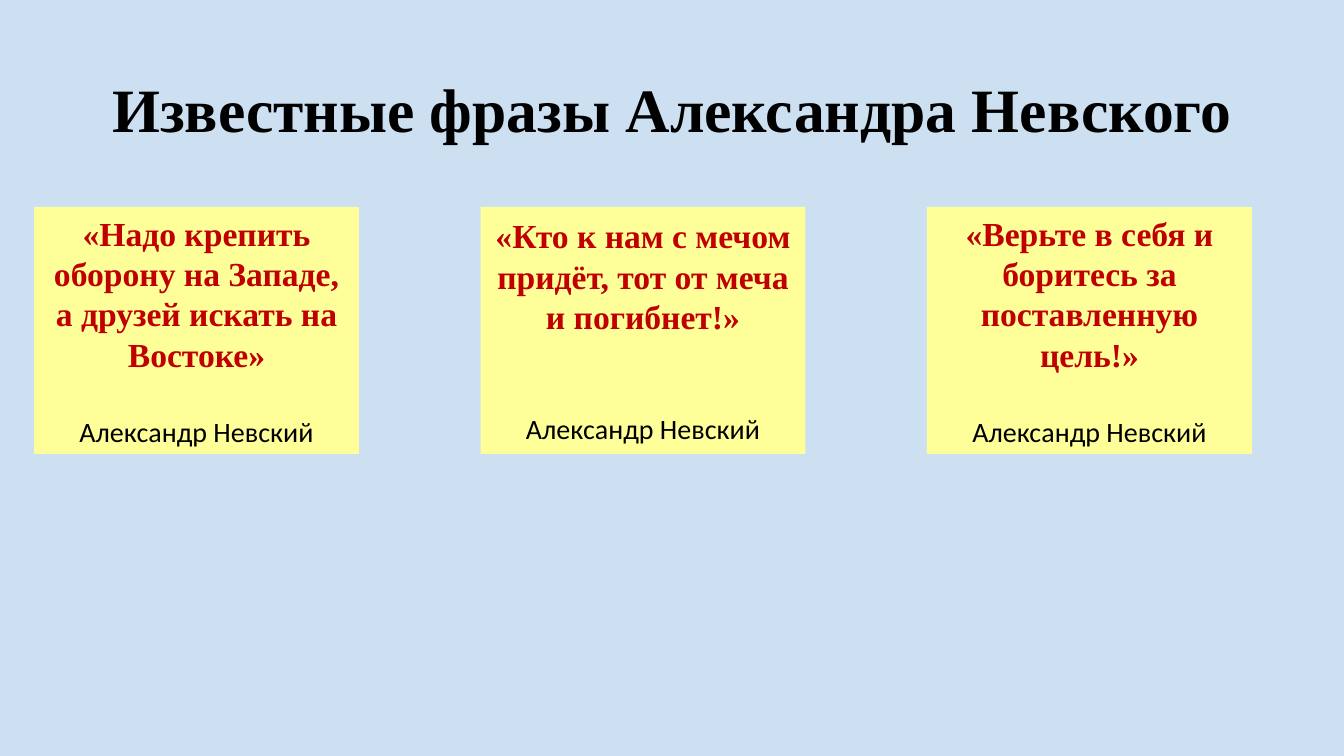
"""Build a slide with three quotations of Alexander Nevsky."""
from dataclasses import dataclass

from pptx import Presentation
from pptx import util as u
from pptx.dml.color import RGBColor
from pptx.enum import shapes, text

TITLE = "Известные фразы Александра Невского"
AUTHOR = "Александр Невский"
QUOTES = [
    ("«Надо крепить оборону на Западе, а друзей искать на Востоке»", 29),
    ("«Кто к нам с мечом придёт, тот от меча и погибнет!»", 54),
    ("«Верьте в себя и боритесь за поставленную цель!»", 29),
]

SLIDE = (1344, 756)
TITLE_BOX = (93, 40, 1159, 146)
CARD_TOP, CARD_W, CARD_H = 207, 325, 247
FIRST_LEFT, LAST_LEFT = 34, 927
EMU_PER_PX = 914400 / 100.8


@dataclass(frozen=True)
class Theme:
    """Colours, fonts and type sizes."""
    back: str = "CCE0F2"
    card: str = "FFFF99"
    quote: str = "C00000"
    ink: str = "000000"
    serif: str = "Times New Roman"
    sans: str = "Calibri"
    title_pt: int = 44
    quote_pt: int = 24
    author_pt: int = 20


THEME = Theme()


def px(n):
    """Turn pixels into EMU."""
    return u.Emu(round(n * EMU_PER_PX))


def paint(fill, colour):
    """Fill with one solid colour."""
    fill.solid()
    fill.fore_color.rgb = RGBColor.from_string(colour)


def write(p, words, font, size, colour, bold):
    """Add one centred run to a paragraph."""
    p.alignment = text.PP_ALIGN.CENTER
    r = p.add_run()
    r.text = words
    r.font.name, r.font.size, r.font.bold = font, u.Pt(size), bold
    r.font.color.rgb = RGBColor.from_string(colour)


def add_title(s):
    """Place and format the title."""
    sp = s.shapes.title
    sp.left, sp.top, sp.width, sp.height = map(px, TITLE_BOX)
    tf = sp.text_frame
    tf.word_wrap = True
    tf.vertical_anchor = text.MSO_ANCHOR.MIDDLE
    p = tf.paragraphs[0]
    p.line_spacing = 0.9
    write(p, TITLE, THEME.serif, THEME.title_pt, THEME.ink, True)


def add_card(s, left, quote, gap):
    """Add a quotation card with its author below a gap."""
    box = map(px, (left, CARD_TOP, CARD_W, CARD_H))
    sp = s.shapes.add_shape(shapes.MSO_SHAPE.RECTANGLE, *box)
    sp.shadow.inherit = False
    paint(sp.fill, THEME.card)
    sp.line.fill.background()
    tf = sp.text_frame
    tf.word_wrap = True
    tf.vertical_anchor = text.MSO_ANCHOR.MIDDLE
    write(tf.paragraphs[0], quote, THEME.serif, THEME.quote_pt, THEME.quote, True)
    p = tf.add_paragraph()
    p.space_before = u.Pt(gap)
    write(p, AUTHOR, THEME.sans, THEME.author_pt, THEME.ink, False)


def main():
    """Build and save the slide."""
    prs = Presentation()
    prs.slide_width, prs.slide_height = map(px, SLIDE)
    s = prs.slides.add_slide(prs.slide_layouts[5])
    paint(s.background.fill, THEME.back)
    add_title(s)
    step = (LAST_LEFT - FIRST_LEFT) / (len(QUOTES) - 1)
    for i, (quote, gap) in enumerate(QUOTES):
        add_card(s, FIRST_LEFT + i * step, quote, gap)
    prs.save("out.pptx")


if __name__ == "__main__":
    main()
